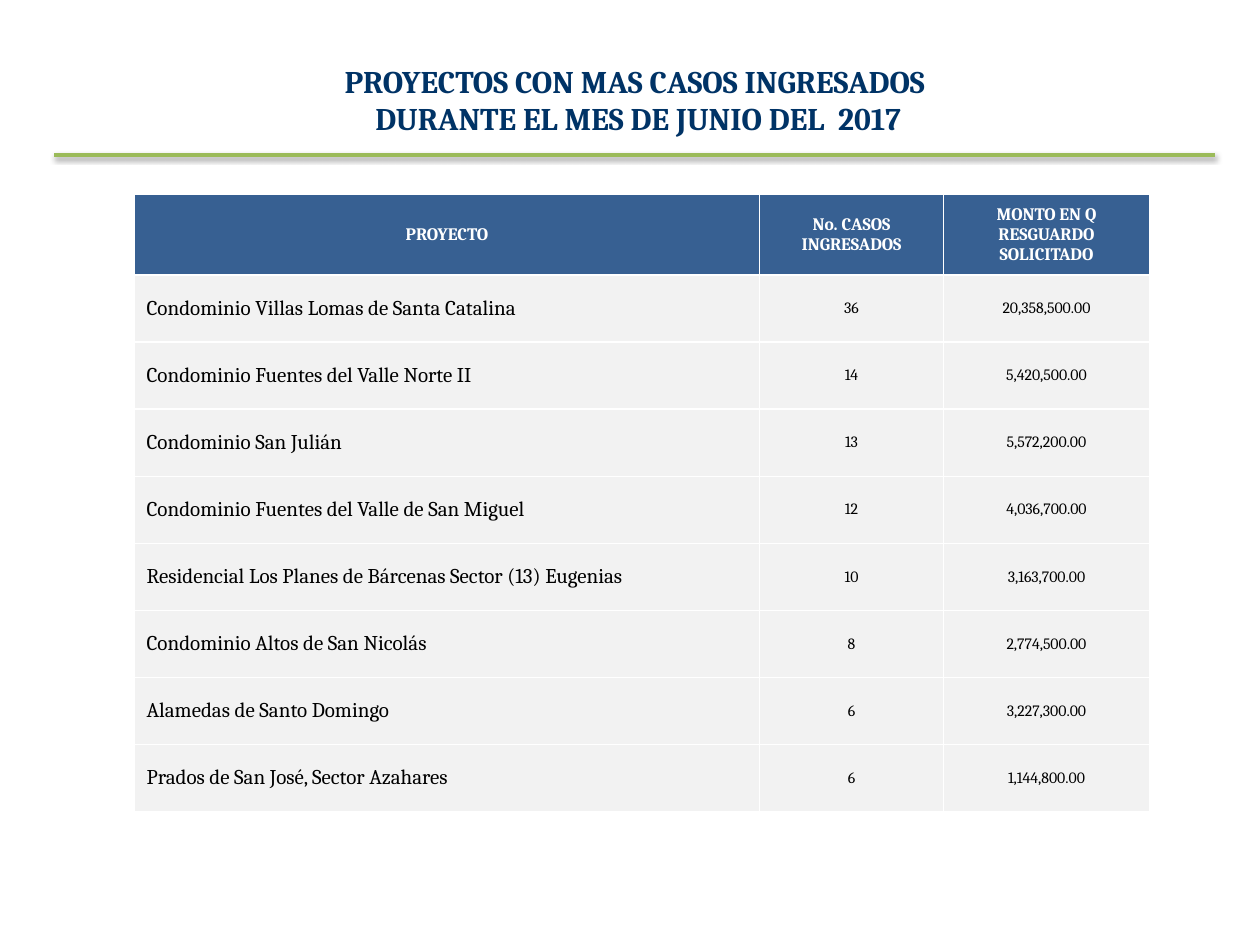
from lxml import etree
from pptx import Presentation
from pptx.dml.color import RGBColor
from pptx.enum import shapes, text
from pptx.oxml import ns
from pptx.util import Pt

NAVY = RGBColor(0x00, 0x33, 0x66)
GREEN = RGBColor(0x9B, 0xBB, 0x59)
BLUE = RGBColor(0x37, 0x60, 0x92)
GREY = RGBColor(0xF2, 0xF2, 0xF2)
WHITE = RGBColor(0xFF, 0xFF, 0xFF)
BLACK = RGBColor(0x00, 0x00, 0x00)
FONT = "Cambria"
LEFT, MID = text.PP_ALIGN.LEFT, text.PP_ALIGN.CENTER

TITLE = ["PROYECTOS CON MAS CASOS INGRESADOS ",
         "DURANTE EL MES DE JUNIO DEL  2017"]
HEADS = [["PROYECTO"], ["No. CASOS", "INGRESADOS"],
         ["MONTO EN Q", "RESGUARDO", "SOLICITADO"]]
ROWS = [
    ("Condominio Villas Lomas de Santa Catalina", "36", "20,358,500.00"),
    ("Condominio Fuentes del Valle Norte II", "14", "5,420,500.00"),
    ("Condominio San Julián", "13", "5,572,200.00"),
    ("Condominio Fuentes del Valle de San Miguel", "12", "4,036,700.00"),
    ("Residencial Los Planes de Bárcenas Sector (13) Eugenias", "10",
     "3,163,700.00"),
    ("Condominio Altos de San Nicolás", "8", "2,774,500.00"),
    ("Alamedas de Santo Domingo", "6", "3,227,300.00"),
    ("Prados de San José, Sector Azahares", "6", "1,144,800.00"),
]
WIDTHS = [357.5, 105, 117.8]
HEAD_H, ROW_H = 46, 38.35


def add_node(parent, tag, **attrs):
    return etree.SubElement(parent, ns.qn(tag), attrs)


def write(frame, lines, size, color, bold=False, align=MID):
    for i, line in enumerate(lines):
        para = frame.add_paragraph() if i else frame.paragraphs[0]
        para.alignment = align
        run = para.add_run()
        run.text = line
        font = run.font
        font.name, font.size, font.bold = FONT, Pt(size), bold
        font.color.rgb = color


def add_title(slide):
    box = slide.shapes.add_textbox(Pt(116), Pt(31.7), Pt(497.5), Pt(51))
    box.text_frame.word_wrap = True
    write(box.text_frame, TITLE, 18, NAVY, bold=True)


def add_rule(slide):
    """Draw the green line under the title, with its soft shadow."""
    rule = slide.shapes.add_connector(
        shapes.MSO_CONNECTOR.STRAIGHT, Pt(31), Pt(88.6), Pt(694.5), Pt(88.6))
    rule.line.color.rgb = GREEN
    rule.line.width = Pt(2)
    effects = add_node(rule._element.spPr, "a:effectLst")
    shadow = add_node(effects, "a:outerShdw", blurRad=str(Pt(3.1)),
                      dist=str(Pt(1.6)), dir="5400000", rotWithShape="0")
    color = add_node(shadow, "a:srgbClr", val=str(BLACK))
    add_node(color, "a:alpha", val="38000")


def style_cell(cell, fill):
    """Set white borders, then the fill, in the order the schema asks for."""
    cell.vertical_anchor = text.MSO_ANCHOR.MIDDLE
    props = cell._tc.get_or_add_tcPr()
    for side in "LRTB":
        edge = add_node(props, f"a:ln{side}", w=str(Pt(1)))
        solid = add_node(edge, "a:solidFill")
        add_node(solid, "a:srgbClr", val=str(WHITE))
    cell.fill.solid()
    cell.fill.fore_color.rgb = fill


def add_grid(slide):
    frame = slide.shapes.add_table(
        len(ROWS) + 1, len(WIDTHS), Pt(76.6), Pt(111.2),
        Pt(sum(WIDTHS)), Pt(HEAD_H + ROW_H * len(ROWS)))
    table = frame.table
    for col, width in zip(table.columns, WIDTHS):
        col.width = Pt(width)
    for i, row in enumerate(table.rows):
        row.height = Pt(ROW_H if i else HEAD_H)

    for c, lines in enumerate(HEADS):
        cell = table.cell(0, c)
        style_cell(cell, BLUE)
        write(cell.text_frame, lines, 10, WHITE, bold=True)
    for r, values in enumerate(ROWS, 1):
        for c, value in enumerate(values):
            cell = table.cell(r, c)
            style_cell(cell, GREY)
            size, align = (9, MID) if c else (12, LEFT)
            write(cell.text_frame, [value], size, BLACK, align=align)


def main():
    deck = Presentation()
    deck.slide_width, deck.slide_height = Pt(720), Pt(540)
    slide = deck.slides.add_slide(deck.slide_layouts[6])
    add_title(slide)
    add_rule(slide)
    add_grid(slide)
    deck.save("out.pptx")


if __name__ == "__main__":
    main()
